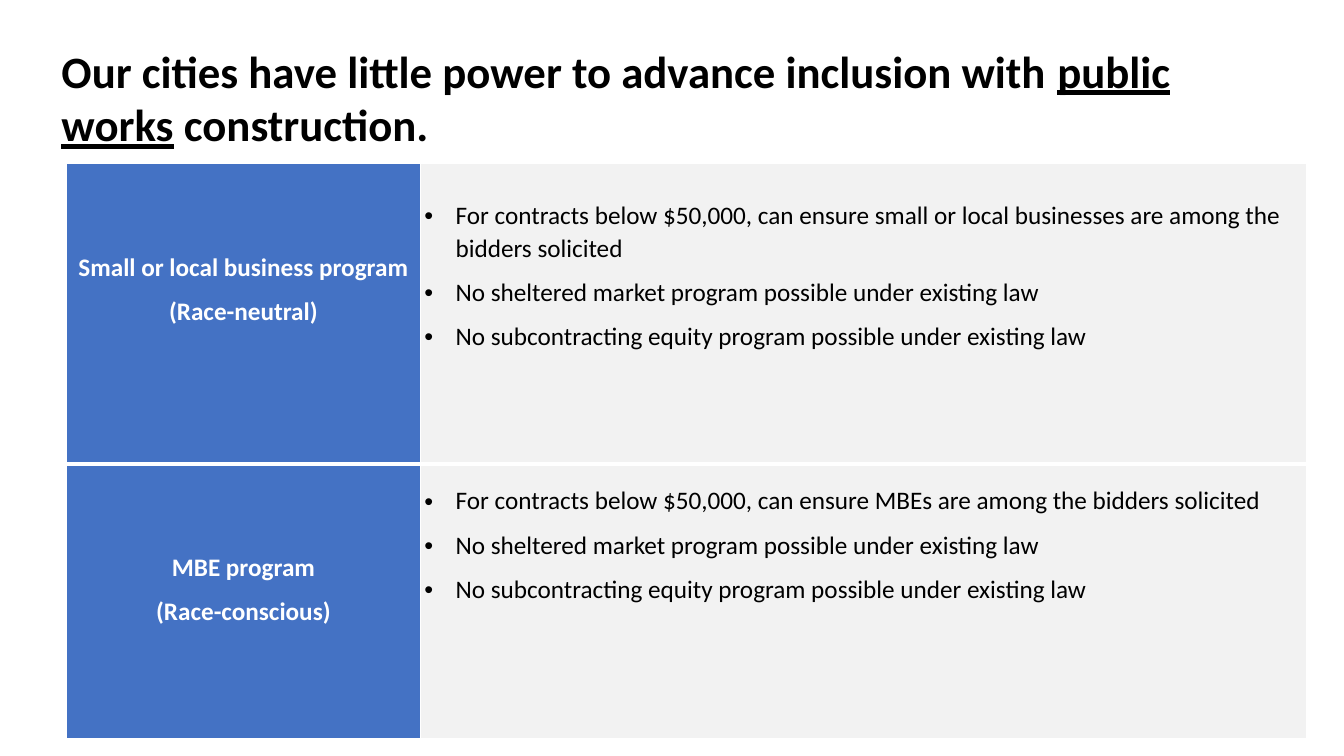
from dataclasses import dataclass

from lxml.etree import SubElement
from pptx import Presentation
from pptx.dml.color import RGBColor as RGB
from pptx.enum.text import MSO_ANCHOR as Anchor, MSO_AUTO_SIZE as Fit, PP_ALIGN as Align
from pptx.oxml.ns import qn
from pptx.util import Inches, Pt


@dataclass(frozen=True)
class Theme:
    font: str = "Calibri"
    black: str = "000000"
    white: str = "FFFFFF"
    blue: str = "4472C4"
    gray: str = "F2F2F2"
    title: int = 32
    body: int = 18


theme = Theme()


def write(para, text, size=theme.body, color=theme.black, bold=False, under=False):
    run = para.add_run()
    run.text = text
    font = run.font
    font.name, font.size = theme.font, Pt(size)
    font.bold, font.underline = bold, under
    font.color.rgb = RGB.from_string(color)


def edge(cell, widths):
    """Draw white cell borders; widths maps a side tag to points."""
    props = cell._tc.get_or_add_tcPr()
    for spot, (side, width) in enumerate(widths.items()):
        line = SubElement(props, qn(f"a:{side}"), w=str(Pt(width)))
        fill = SubElement(line, qn("a:solidFill"))
        SubElement(fill, qn("a:srgbClr"), val=theme.white)
        props.insert(spot, line)


deck = Presentation()
deck.slide_width, deck.slide_height = Inches(13.33), Inches(7.5)
slide = deck.slides.add_slide(deck.slide_layouts[5])

# Title
title = slide.shapes.title
title.left, title.top = Inches(0.51), Inches(0.38)
title.width, title.height = Inches(12.3), Inches(1.18)
frame = title.text_frame
frame.word_wrap = True
frame.auto_size = Fit.SHAPE_TO_FIT_TEXT
frame.vertical_anchor = Anchor.TOP
head = frame.paragraphs[0]
head.alignment = Align.LEFT
for text, under in (
    ("Our cities have little power to advance inclusion with ", False),
    ("public works", True),
    (" construction.", False),
):
    write(head, text, size=theme.title, bold=True, under=under)

# Table: name, group, first bullet, row height, top margin of the bullets
rules = [
    ("Small or local business program", "(Race-neutral)",
     "For contracts below $50,000, can ensure small or local businesses "
     "are among the bidders solicited", 2.98, 0.35),
    ("MBE program", "(Race-conscious)",
     "For contracts below $50,000, can ensure MBEs are among the bidders solicited",
     2.73, 0.2),
]
limits = [
    "No sheltered market program possible under existing law",
    "No subcontracting equity program possible under existing law",
]
table = slide.shapes.add_table(
    2, 2, Inches(0.66), Inches(1.62), Inches(12.3), Inches(5.71)).table
table.first_row = table.horz_banding = False
for col, width in zip(table.columns, (3.51, 8.79)):
    col.width = Inches(width)

for row, (name, group, first, height, top) in enumerate(rules):
    table.rows[row].height = Inches(height)
    sides = (
        ([name, group], theme.blue, theme.white, 0.86, 0),
        ([first, *limits], theme.gray, theme.black, top, 0.04),
    )
    for col, (lines, fill, color, above, below) in enumerate(sides):
        cell = table.cell(row, col)
        cell.fill.solid()
        cell.fill.fore_color.rgb = RGB.from_string(fill)
        cell.vertical_anchor = Anchor.TOP
        cell.margin_left = cell.margin_right = Inches(0.04)
        cell.margin_top, cell.margin_bottom = Inches(above), Inches(below)
        edge(cell, {"lnL": 1, "lnR": 1, "lnT": 3 if row else 1, "lnB": 1 if row else 3})
        for spot, text in enumerate(lines):
            para = cell.text_frame.add_paragraph() if spot else cell.text_frame.paragraphs[0]
            para.line_spacing, para.space_after = 1.07, Pt(8)
            write(para, text, color=color, bold=col == 0)
            if col == 0:
                para.alignment = Align.CENTER
                continue
            props = para._p.get_or_add_pPr()
            props.set("marL", str(Inches(0.31)))
            props.set("indent", str(-Inches(0.31)))
            SubElement(props, qn("a:buFont"), typeface="Arial")
            SubElement(props, qn("a:buChar"), char="•")

deck.save("out.pptx")
